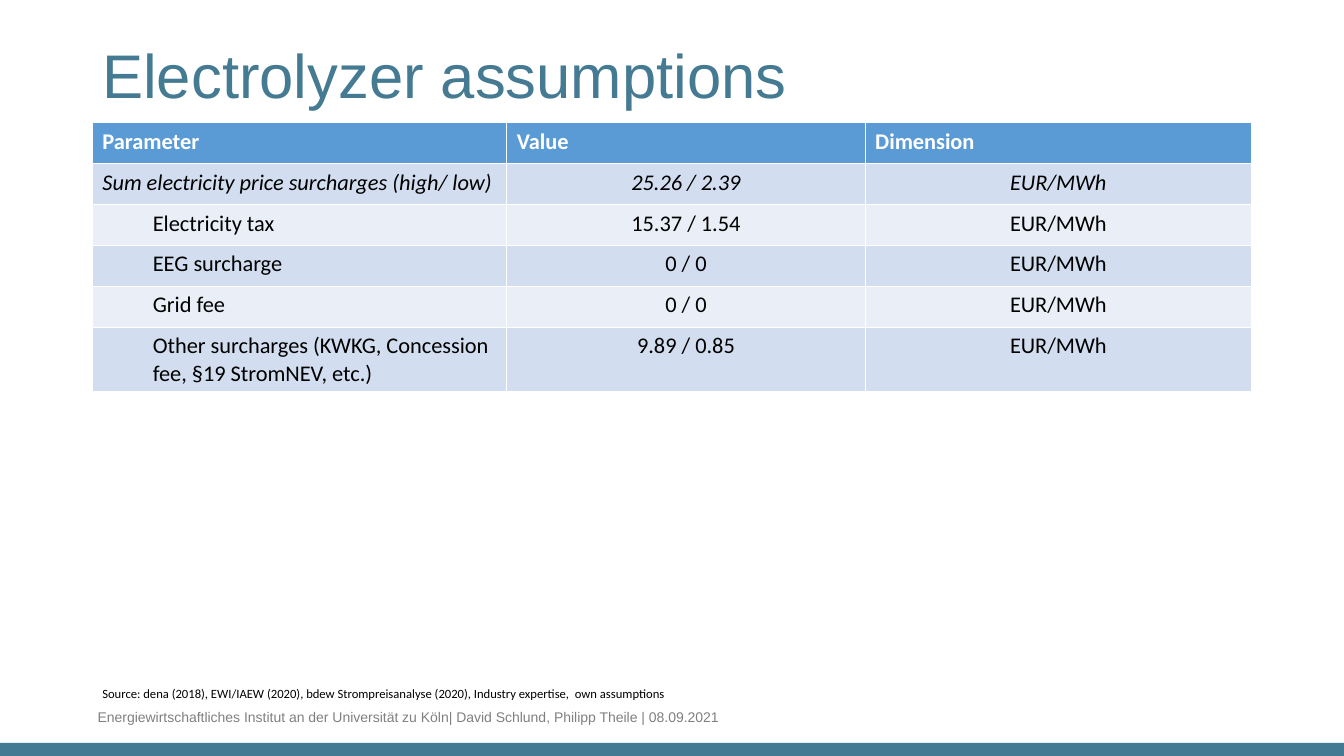
import pptx
import pptx.dml.color
import pptx.enum.shapes
import pptx.enum.text
import pptx.util

Pt = pptx.util.Pt
RGBColor = pptx.dml.color.RGBColor
Align = pptx.enum.text.PP_ALIGN

TEAL = RGBColor(0x45, 0x7A, 0x93)
GRAY = RGBColor(0x80, 0x80, 0x80)
BLACK = RGBColor(0, 0, 0)
WHITE = RGBColor(0xFF, 0xFF, 0xFF)
HEADER_BLUE = RGBColor(0x5B, 0x9B, 0xD5)
BANDS = (RGBColor(0xD2, 0xDE, 0xEF), RGBColor(0xEA, 0xEF, 0xF7))

PAGE_WIDTH, PAGE_HEIGHT = 960, 540
LEFT, CONTENT_WIDTH = 66, 828
ROW_HEIGHT = 29.2
COLUMN_WIDTHS = (296, 256, 276)
HEADERS = ("Parameter", "Value", "Dimension")
UNIT = "EUR/MWh"
SURCHARGES = (
    ("Sum electricity price surcharges (high/ low)", "25.26 / 2.39"),
    ("Electricity tax", "15.37 / 1.54"),
    ("EEG surcharge", "0 / 0"),
    ("Grid fee", "0 / 0"),
    ("Other surcharges (KWKG, Concession fee, §19 StromNEV, etc.)", "9.89 / 0.85"),
)


def style_spans(para, font_name, size, color, bold=False, italic=False):
    """Format every run of a paragraph."""
    for span in para.runs:
        span.font.name = font_name
        span.font.size = Pt(size)
        span.font.color.rgb = color
        span.font.bold = bold
        span.font.italic = italic


def add_text(page, text, left, top, width, height, font_name, size, color):
    """Add a wrapped one-paragraph text box."""
    box = page.shapes.add_textbox(Pt(left), Pt(top), Pt(width), Pt(height))
    box.text_frame.word_wrap = True
    box.text_frame.text = text
    para = box.text_frame.paragraphs[0]
    style_spans(para, font_name, size, color)
    return para


def add_bottom_bar(page, height):
    """Add the coloured strip along the lower edge."""
    bar = page.shapes.add_shape(
        pptx.enum.shapes.MSO_SHAPE.RECTANGLE,
        Pt(0), Pt(PAGE_HEIGHT - height), Pt(PAGE_WIDTH), Pt(height))
    bar.shadow.inherit = False
    bar.fill.solid()
    bar.fill.fore_color.rgb = TEAL
    bar.line.fill.background()


def fill_cell(cell, text, fill, color, bold=False, italic=False, align=Align.LEFT, indent=0):
    """Write and format one table cell."""
    cell.fill.solid()
    cell.fill.fore_color.rgb = fill
    cell.text_frame.text = text
    para = cell.text_frame.paragraphs[0]
    para.alignment = align
    if indent:
        para._p.get_or_add_pPr().set("marL", str(Pt(indent)))
    style_spans(para, "Calibri", 16, color, bold, italic)


def add_surcharge_table(page, top):
    """Add the table with a header, a total row and its indented parts."""
    row_count = len(SURCHARGES) + 1
    table = page.shapes.add_table(
        row_count, len(HEADERS), Pt(LEFT), Pt(top),
        Pt(CONTENT_WIDTH), Pt(ROW_HEIGHT * row_count)).table
    for column, width in zip(table.columns, COLUMN_WIDTHS):
        column.width = Pt(width)
    for row in table.rows:
        row.height = Pt(ROW_HEIGHT)
    for column_index, header in enumerate(HEADERS):
        fill_cell(table.cell(0, column_index), header, HEADER_BLUE, WHITE, bold=True)
    for index, (parameter, value) in enumerate(SURCHARGES):
        is_total = index == 0
        band = BANDS[index % 2]
        fill_cell(table.cell(index + 1, 0), parameter, band, BLACK,
                  italic=is_total, indent=0 if is_total else 36)
        for column_index, text in enumerate((value, UNIT), start=1):
            fill_cell(table.cell(index + 1, column_index), text, band, BLACK,
                      italic=is_total, align=Align.CENTER)


def main():
    """Build the slide and save it."""
    deck = pptx.Presentation()
    deck.slide_width, deck.slide_height = Pt(PAGE_WIDTH), Pt(PAGE_HEIGHT)
    page = deck.slides.add_slide(deck.slide_layouts[6])
    add_bottom_bar(page, 9.4)
    add_text(page, "Energiewirtschaftliches Institut an der Universität zu Köln"
             "| David Schlund, Philipp Theile | 08.09.2021",
             62.6, 502.6, 616, 19.4, "Arial", 10, GRAY)
    title = add_text(page, "Electrolyzer assumptions",
                     LEFT, 28.8, CONTENT_WIDTH, 104.4, "Arial", 44, TEAL)
    title.line_spacing = 0.9
    add_surcharge_table(page, 87.8)
    add_text(page, "Source: dena (2018), EWI/IAEW (2020), bdew Strompreisanalyse (2020), "
             "Industry expertise,  own assumptions",
             LEFT, 486.7, 440.6, 18, "Calibri", 9, BLACK)
    deck.save("out.pptx")


if __name__ == "__main__":
    main()
